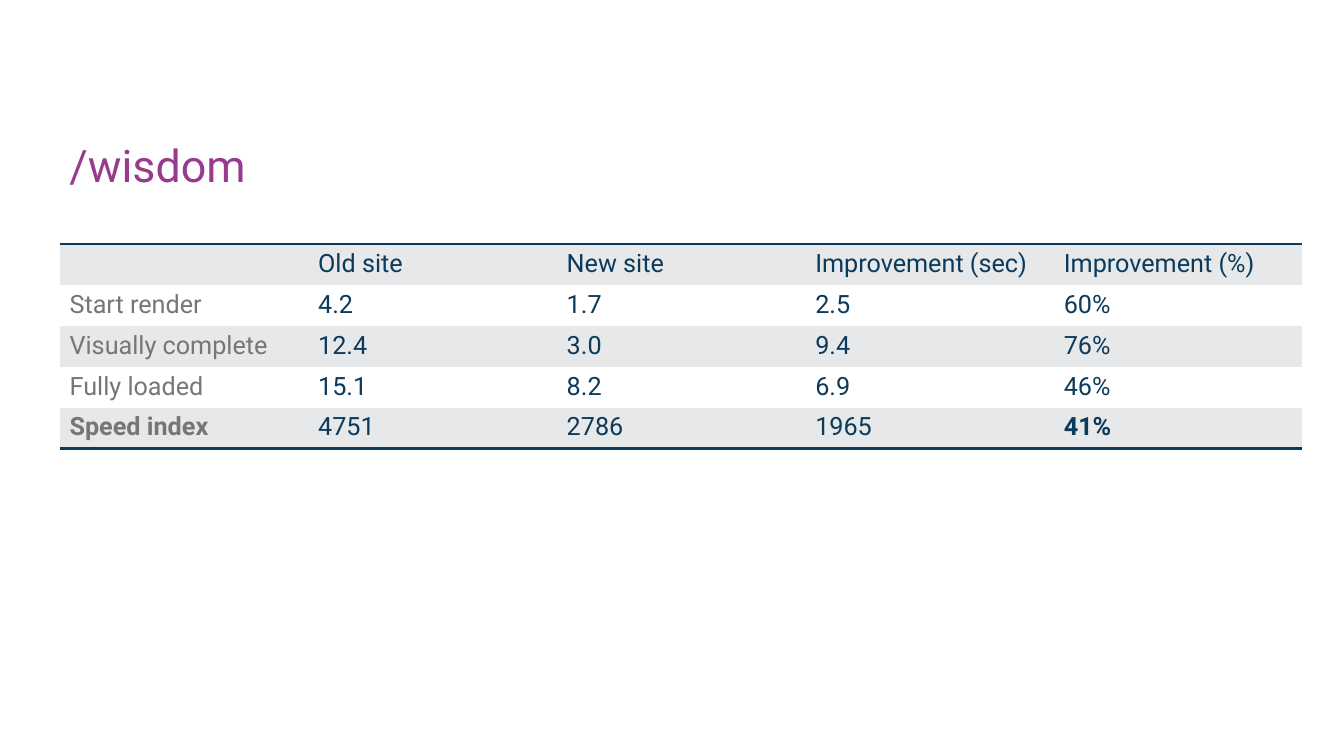
from dataclasses import dataclass

from lxml.etree import SubElement
from pptx import Presentation
from pptx.dml.color import RGBColor
from pptx.enum.text import MSO_ANCHOR
from pptx.oxml import parse_xml
from pptx.oxml.ns import nsdecls, qn
from pptx.slide import Slide
from pptx.table import _Cell
from pptx.text.text import _Paragraph
from pptx.util import Cm, Pt


@dataclass(frozen=True)
class Theme:
    font: str = "Roboto"
    purple: str = "983B8E"
    navy: str = "0C3A5B"
    gray: str = "767676"
    band: str = "E7E8EA"
    white: str = "FFFFFF"
    title: int = 32
    body: int = 18
    rule: int = 2


@dataclass(frozen=True)
class Row:
    label: str
    values: tuple[str, ...]
    strong: tuple[int, ...] = ()  # columns set in bold


THEME = Theme()
LEFT, WIDTH = Cm(1.5), Cm(31.32)
PLAIN = "{2D5ABB26-0587-4C30-8999-92F81FD0307C}"  # no style, no grid

ROWS = (
    Row("", ("Old site", "New site", "Improvement (sec)", "Improvement (%)")),
    Row("Start render", ("4.2", "1.7", "2.5", "60%")),
    Row("Visually complete", ("12.4", "3.0", "9.4", "76%")),
    Row("Fully loaded", ("15.1", "8.2", "6.9", "46%")),
    Row("Speed index", ("4751", "2786", "1965", "41%"), strong=(0, 4)),
)


def style(para: _Paragraph, size: int, color: str, bold: bool = False) -> None:
    font = para.font
    font.name, font.size, font.bold = THEME.font, Pt(size), bold
    font.color.rgb = RGBColor.from_string(color)


def add_rule(cell: _Cell, side: str) -> None:
    """Draw a navy border on the top (T) or bottom (B) of a cell."""
    line = parse_xml(f'<a:ln{side} {nsdecls("a")} w="{Pt(THEME.rule)}"/>')
    fill = SubElement(line, qn("a:solidFill"))
    SubElement(fill, qn("a:srgbClr"), val=THEME.navy)
    cell._tc.get_or_add_tcPr().insert(0, line)


def add_title(slide: Slide, text: str) -> None:
    frame = slide.shapes.add_textbox(LEFT, Cm(3.18), WIDTH, Cm(1.8)).text_frame
    frame.word_wrap = True
    frame.vertical_anchor = MSO_ANCHOR.BOTTOM
    para = frame.paragraphs[0]
    para.text = text
    para.line_spacing = 0.9
    style(para, THEME.title, THEME.purple)


def add_grid(slide: Slide, rows: tuple[Row, ...]) -> None:
    count, high = len(rows[0].values) + 1, Cm(1.03)
    table = slide.shapes.add_table(
        len(rows), count, LEFT, Cm(6.15), WIDTH, high * len(rows)).table
    table.first_row = table.horz_banding = False
    table._tbl.tblPr.find(qn("a:tableStyleId")).text = PLAIN

    for r, row in enumerate(rows):
        table.rows[r].height = high
        for c, text in enumerate((row.label, *row.values)):
            cell = table.cell(r, c)
            cell.text = text
            color = THEME.navy if c else THEME.gray
            style(cell.text_frame.paragraphs[0], THEME.body, color, c in row.strong)
            cell.fill.solid()
            shade = THEME.white if r % 2 else THEME.band
            cell.fill.fore_color.rgb = RGBColor.from_string(shade)

    # Rules above the header and below the last row
    for c in range(count):
        add_rule(table.cell(0, c), "T")
        add_rule(table.cell(len(rows) - 1, c), "B")


def main() -> None:
    deck = Presentation()
    deck.slide_width, deck.slide_height = Cm(33.87), Cm(19.05)
    slide = deck.slides.add_slide(deck.slide_layouts[6])
    add_title(slide, "/wisdom")
    add_grid(slide, ROWS)
    deck.save("out.pptx")


if __name__ == "__main__":
    main()
